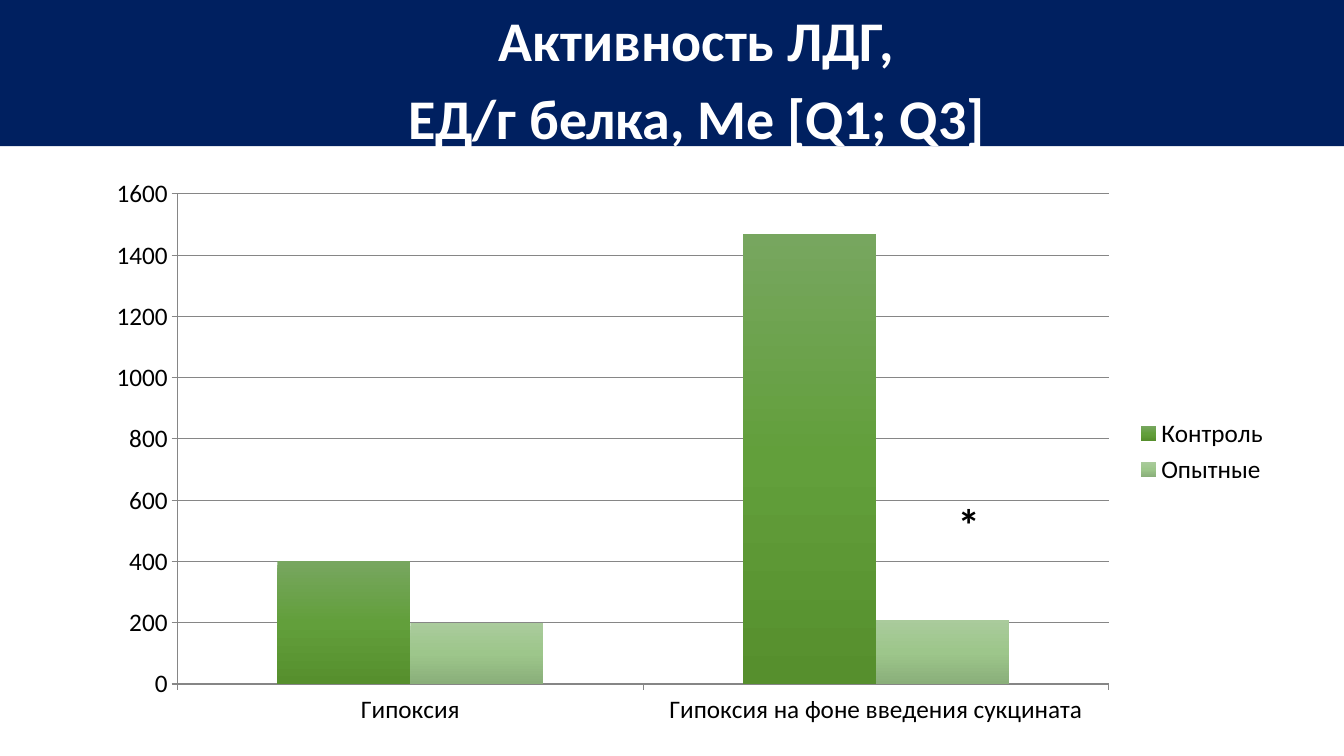
from copy import deepcopy

from pptx import Presentation
from pptx.chart.data import CategoryChartData
from pptx.dml.color import RGBColor
from pptx.enum.chart import XL_CHART_TYPE as ChartType, XL_LEGEND_POSITION as LegendPosition
from pptx.enum.chart import XL_TICK_MARK as TickMark
from pptx.enum.text import MSO_ANCHOR as Anchor, MSO_AUTO_SIZE as AutoSize, PP_ALIGN as Align
from pptx.util import Pt

PX = 9144  # 100 px to the inch

THEME = {
    "font": "Calibri",
    "band": RGBColor.from_string("002060"),
    "title": RGBColor.from_string("FFFFFF"),
    "text": RGBColor.from_string("000000"),
    "grid": RGBColor.from_string("868686"),
    "title_size": Pt(40),
    "mark_size": Pt(32),
    "chart_size": Pt(18),
}

# name: values and gradient from top to bottom
SERIES = {
    "Контроль": ((400, 1470), ("77A65F", "629F3B", "568F2D")),
    "Опытные": ((200, 210), ("AACB9C", "9DC68B", "8AAF7A")),
}


def box(*lengths):
    return [length * PX for length in lengths]


def style_font(font, size, color, bold):
    for name, value in {"name": THEME["font"], "size": THEME[size], "bold": bold}.items():
        setattr(font, name, value)
    font.color.rgb = THEME[color]


presentation = Presentation()
presentation.slide_width, presentation.slide_height = box(1333, 750)
slide = presentation.slides.add_slide(presentation.slide_layouts[5])

# Title band
title = slide.shapes.title
title.left, title.top, title.width, title.height = box(0, 0, 1333, 145)
title.fill.solid()
title.fill.fore_color.rgb = THEME["band"]
title_frame = title.text_frame
title_frame.text = "Активность ЛДГ,\nЕД/г белка, Me [Q1; Q3]"
for name, value in {"vertical_anchor": Anchor.MIDDLE, "auto_size": AutoSize.NONE, "word_wrap": True}.items():
    setattr(title_frame, name, value)
for paragraph in title_frame.paragraphs:
    paragraph.alignment = Align.CENTER
    paragraph.line_spacing = 1.15
    paragraph._p.get_or_add_pPr().set("indent", str(49 * PX))
    style_font(paragraph.runs[0].font, "title_size", "title", True)

# Column chart
chart_data = CategoryChartData()
chart_data.categories = ["Гипоксия", "Гипоксия на фоне введения сукцината"]
for name, (values, _) in SERIES.items():
    chart_data.add_series(name, values)
chart = slide.shapes.add_chart(ChartType.COLUMN_CLUSTERED, *box(92, 166, 1177, 564), chart_data).chart
style_font(chart.font, "chart_size", "text", False)
chart.has_title = False
chart.has_legend = True
chart.legend.position = LegendPosition.RIGHT
chart.legend.include_in_layout = False

# Columns with a vertical three-stop gradient
plot = chart.plots[0]
for name, value in {"gap_width": 150, "overlap": 0, "vary_by_categories": False}.items():
    setattr(plot, name, value)
for series, (_, colors) in zip(plot.series, SERIES.values()):
    fill = series.format.fill
    fill.gradient()
    fill.gradient_angle = 270
    first_stop = fill.gradient_stops[0]._gs
    first_stop.addnext(deepcopy(first_stop))
    for index, (stop, color) in enumerate(zip(fill.gradient_stops, colors)):
        stop.position = index / 2
        stop.color.rgb = RGBColor.from_string(color)

# Axes and gridlines
value_axis = chart.value_axis
for name, value in {"minimum_scale": 0, "maximum_scale": 1600, "major_unit": 200,
                    "has_major_gridlines": True}.items():
    setattr(value_axis, name, value)
for axis in (chart.category_axis, value_axis):
    axis.major_tick_mark = TickMark.OUTSIDE
    axis.minor_tick_mark = TickMark.NONE
for line in (chart.category_axis.format.line, value_axis.format.line, value_axis.major_gridlines.format.line):
    line.color.rgb = THEME["grid"]
    line.width = Pt(0.75)

# Significance mark
mark = slide.shapes.add_textbox(*box(940, 488, 43, 64))
mark_frame = mark.text_frame
mark_frame.text = "*"
mark_frame.word_wrap = False
mark_frame.auto_size = AutoSize.SHAPE_TO_FIT_TEXT
style_font(mark_frame.paragraphs[0].runs[0].font, "mark_size", "text", True)

presentation.save("out.pptx")
